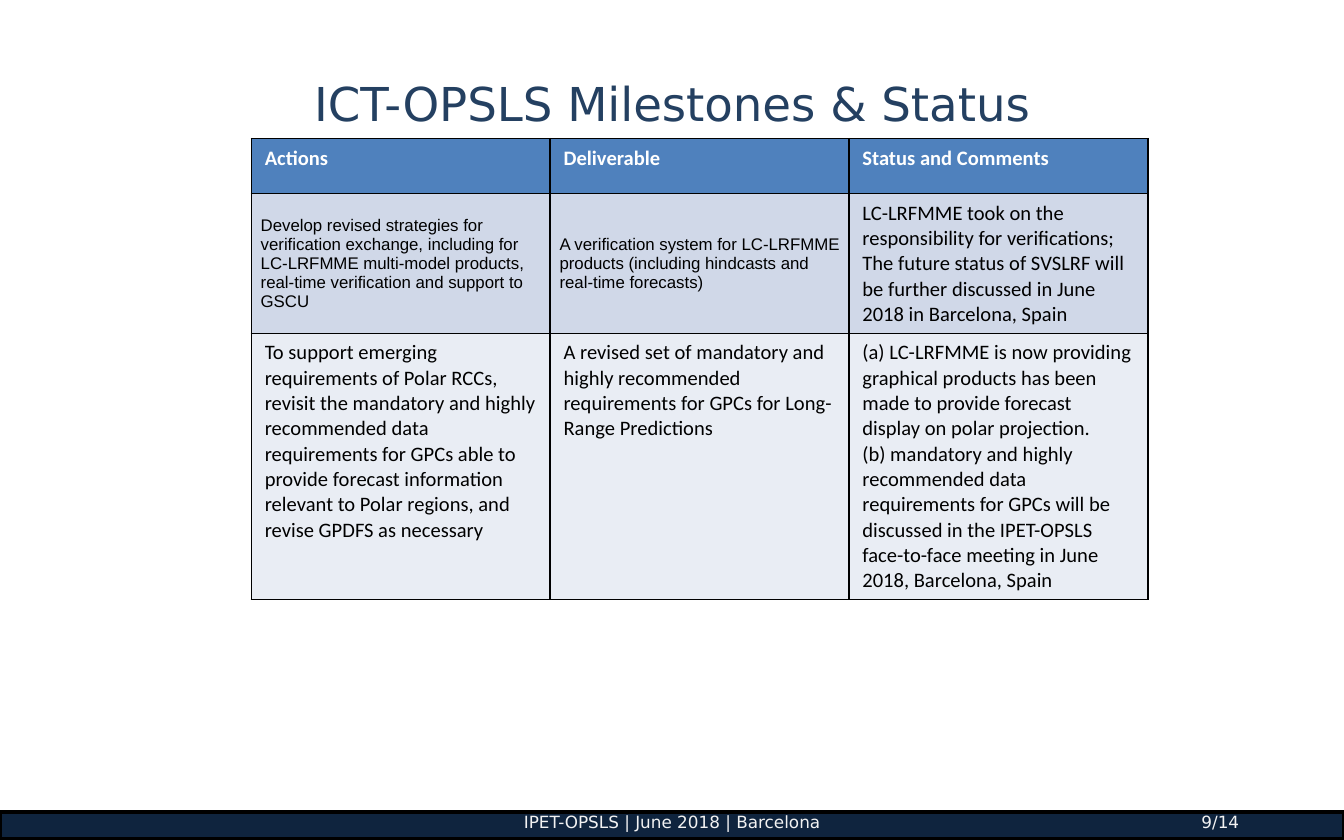
from lxml.etree import SubElement
from pptx import Presentation
from pptx.dml.color import RGBColor
from pptx.enum.shapes import MSO_SHAPE as Shape
from pptx.enum.text import MSO_ANCHOR as Anchor, PP_ALIGN as Align
from pptx.oxml.ns import qn
from pptx.util import Inches, Pt

WIDTH, HEIGHT = Inches(10), Inches(6.25)
WHITE = RGBColor(0xFF, 0xFF, 0xFF)
BLACK = RGBColor(0, 0, 0)
NAVY = RGBColor(0x0F, 0x24, 0x3E)
TITLE_BLUE = RGBColor(0x24, 0x40, 0x61)
FOOTER_GREY = RGBColor(0xF2, 0xF2, 0xF2)
ROW_FILLS = [RGBColor(0x4F, 0x81, 0xBD), RGBColor(0xD0, 0xD8, 0xE8),
             RGBColor(0xE9, 0xED, 0xF4)]

HEADINGS = ["Actions", "Deliverable", "Status and Comments"]
VERIFICATION = [
    "Develop revised strategies for verification exchange, including for "
    "LC-LRFMME multi-model products, real-time verification and support to GSCU",
    "A verification system for LC-LRFMME products (including hindcasts and "
    "real-time forecasts)",
    "LC-LRFMME took on the responsibility for verifications; The future status "
    "of SVSLRF will be further discussed in June 2018 in Barcelona, Spain",
]
POLAR = [
    "To support emerging requirements of Polar RCCs, revisit the mandatory and "
    "highly recommended data requirements for GPCs able to provide forecast "
    "information relevant to Polar regions, and revise GPDFS as necessary",
    "A revised set of mandatory and highly recommended requirements for GPCs "
    "for Long-Range Predictions",
    "(a) LC-LRFMME is now providing graphical products has been made to provide "
    "forecast display on polar projection.\n"
    "(b) mandatory and highly recommended data requirements for GPCs will be "
    "discussed in the IPET-OPSLS face-to-face meeting in June 2018, "
    "Barcelona, Spain",
]
MILESTONES = [HEADINGS, VERIFICATION, POLAR]
ROW_HEIGHTS = [0.41, 1.04, 1.98]


def write(frame, text, *, font, size, color, bold=False, align=Align.LEFT):
    frame.word_wrap = True
    frame.text = text
    for paragraph in frame.paragraphs:
        paragraph.alignment = align
        style = paragraph.font
        style.name, style.size, style.bold = font, Pt(size), bold
        style.color.rgb = color


def set_insets(frame, side, vertical):
    frame.margin_left = frame.margin_right = Inches(side)
    frame.margin_top = frame.margin_bottom = Inches(vertical)


def outline_cell(cell):
    properties = cell._tc.get_or_add_tcPr()
    for side in ("a:lnL", "a:lnR", "a:lnT", "a:lnB"):
        border = SubElement(properties, qn(side), w=str(Pt(1)))
        fill = SubElement(border, qn("a:solidFill"))
        SubElement(fill, qn("a:srgbClr"), val=str(BLACK))


class MilestoneSlide:
    """Places elements by shares of the slide's width and height."""

    display_font = "DejaVu Sans"
    body_font = "Calibri"
    compact_font = "Arial"

    def __init__(self, deck):
        self.slide = deck.slides.add_slide(deck.slide_layouts[5])
        self.shapes = self.slide.shapes

    def box(self, left, top, width, height):
        return (round(left * WIDTH), round(top * HEIGHT),
                round(width * WIDTH), round(height * HEIGHT))

    def title(self, text, *area):
        heading = self.shapes.title
        heading.left, heading.top, heading.width, heading.height = self.box(*area)
        frame = heading.text_frame
        set_insets(frame, 0.1, 0.1)
        frame.vertical_anchor = Anchor.MIDDLE
        write(frame, text, font=self.display_font, size=25, color=TITLE_BLUE,
              align=Align.CENTER)

    def band(self, *area):
        band = self.shapes.add_shape(Shape.RECTANGLE, *self.box(*area))
        band.shadow.inherit = False
        band.fill.solid()
        band.fill.fore_color.rgb = NAVY
        band.line.color.rgb = BLACK
        band.line.width = Pt(2)

    def footer_text(self, text, align, *area):
        frame = self.shapes.add_textbox(*self.box(*area)).text_frame
        set_insets(frame, 0.08, 0.04)
        write(frame, text, font=self.display_font, size=9, color=FOOTER_GREY,
              align=align)

    def table(self, rows, heights, *area):
        table = self.shapes.add_table(len(rows), len(rows[0]),
                                      *self.box(*area)).table
        for r, (texts, height) in enumerate(zip(rows, heights)):
            table.rows[r].height = Inches(height)
            for c, text in enumerate(texts):
                self.cell(table.cell(r, c), text, ROW_FILLS[r],
                          header=r == 0, compact=r == 1 and c < 2)

    def cell(self, cell, text, fill, header, compact):
        outline_cell(cell)
        cell.fill.solid()
        cell.fill.fore_color.rgb = fill
        if compact:
            set_insets(cell, 0.07, 0)
            cell.vertical_anchor = Anchor.MIDDLE
        write(cell.text_frame, text,
              font=self.compact_font if compact else self.body_font,
              size=9 if compact else 11,
              color=WHITE if header else BLACK, bold=header)


def main():
    deck = Presentation()
    deck.slide_width, deck.slide_height = WIDTH, HEIGHT
    page = MilestoneSlide(deck)
    page.band(0, 0.967, 1, 0.032)
    page.footer_text("IPET-OPSLS | June 2018 | Barcelona", Align.CENTER,
                     0, 0.96, 1, 0.04)
    page.footer_text("9/14", Align.RIGHT, 0.83, 0.96, 0.1, 0.04)
    page.title("ICT-OPSLS Milestones & Status", 0.05, 0.04, 0.9, 0.166)
    page.table(MILESTONES, ROW_HEIGHTS,
               0.187, 0.165, 0.667, sum(ROW_HEIGHTS) / 6.25)
    deck.save("out.pptx")


if __name__ == "__main__":
    main()
